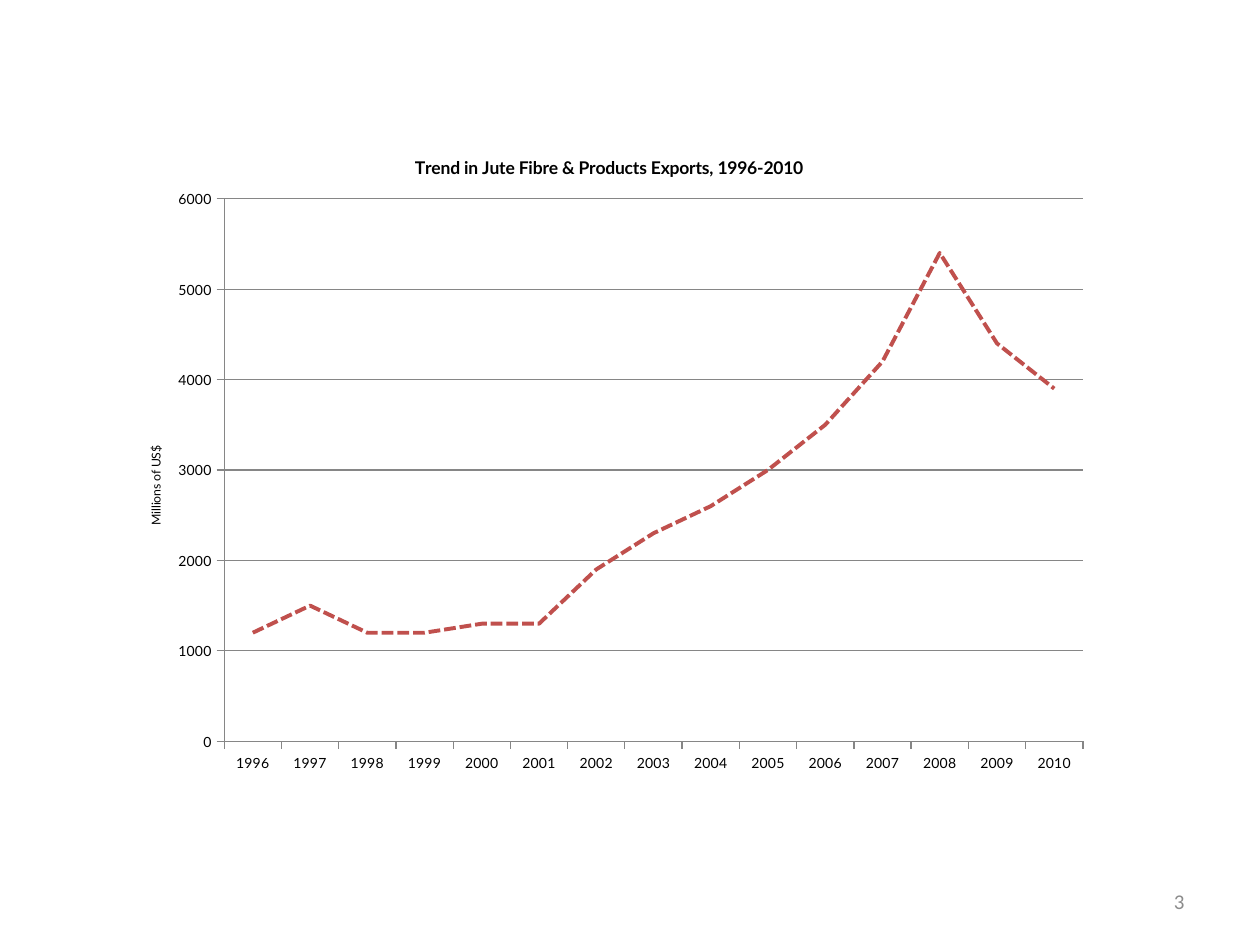
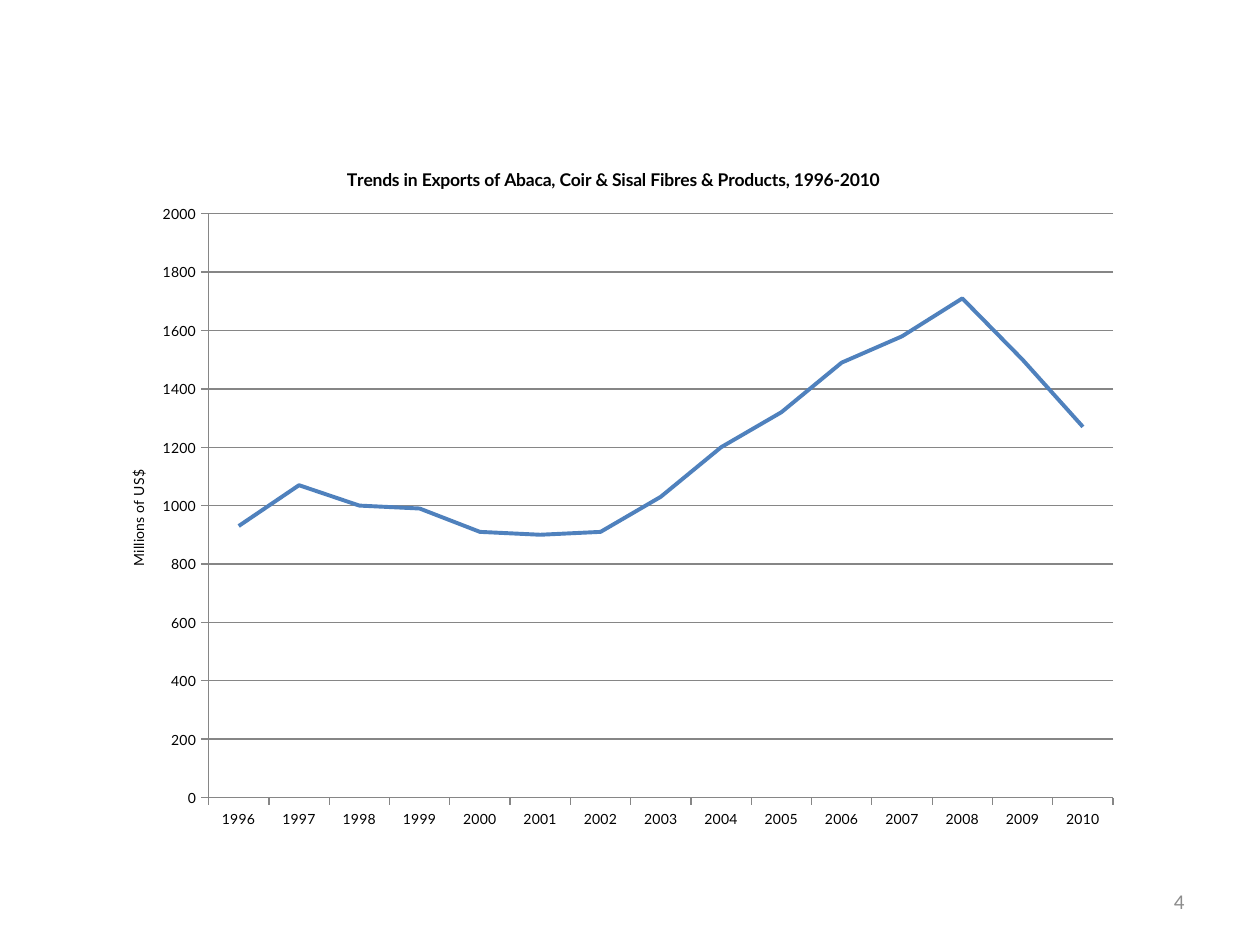
from lxml import etree
from pptx import Presentation
from pptx import util as u
from pptx.chart import data as cd
from pptx.dml import color
from pptx.enum import chart as ch, dml, text
from pptx.oxml import ns

# Shared style
INK, GREY, AXIS_GREY = "000000", "8C8C8C", "868686"
BODY_FONT, CHART_FONT = "Calibri", "Lato"
YEARS = [str(year) for year in range(1996, 2011)]


def rgb(value):
    return color.RGBColor.from_string(value)


def set_layout(parent, index, inner=False, **fractions):
    """Place a chart part by fractions of the chart area."""
    old = parent.find(ns.qn("c:layout"))
    if old is not None:
        parent.remove(old)
    layout = etree.Element(ns.qn("c:layout"))
    manual = etree.SubElement(layout, ns.qn("c:manualLayout"))
    settings = {"layoutTarget": "inner"} if inner else {}
    settings.update(xMode="edge", yMode="edge", **fractions)
    for tag, value in settings.items():
        etree.SubElement(manual, ns.qn("c:" + tag)).set("val", str(value))
    parent.insert(index, layout)


class Deck:
    def __init__(self):
        self.prs = Presentation()
        self.prs.slide_width, self.prs.slide_height = u.Cm(25.4), u.Cm(19.05)
        self.s = None

    def add_slide(self, number):
        self.s = self.prs.slides.add_slide(self.prs.slide_layouts[6])
        self.page_number(number)

    def style(self, font, size, ink=INK, name=CHART_FONT, bold=False):
        font.name, font.size, font.bold = name, u.Pt(size), bold
        font.color.rgb = rgb(ink)

    def page_number(self, number):
        sp = self.s.shapes.add_textbox(u.Cm(18.2), u.Cm(17.66), u.Cm(5.93), u.Cm(1.01))
        tf = sp.text_frame
        tf.word_wrap = True
        tf.vertical_anchor = text.MSO_ANCHOR.MIDDLE
        p = tf.paragraphs[0]
        p.alignment = text.PP_ALIGN.RIGHT
        r = p.add_run()
        r.text = str(number)
        self.style(r.font, 12, GREY, BODY_FONT)

    def chart_text(self, title, words, size, x, y, bold=False):
        tf = title.text_frame
        r = tf.paragraphs[0].add_run()
        r.text = words
        self.style(r.font, size, bold=bold)
        set_layout(title.element, 1, x=x, y=y)

    def axis(self, axis):
        axis.major_tick_mark = ch.XL_TICK_MARK.OUTSIDE
        axis.minor_tick_mark = ch.XL_TICK_MARK.NONE
        self.style(axis.tick_labels.font, 8)
        self.line(axis.format.line, AXIS_GREY, 0.75)

    def line(self, line, ink, width):
        line.color.rgb = rgb(ink)
        line.width = u.Pt(width)

    def trend_chart(self, box, title, title_x, values, ink, top, unit_size,
                    unit_y, plot_height, dash=None):
        data = cd.CategoryChartData()
        data.categories = YEARS
        data.add_series("Series 1", values)
        frame = self.s.shapes.add_chart(
            ch.XL_CHART_TYPE.LINE, *(u.Cm(v) for v in box), data)
        chart = frame.chart
        chart.has_legend = False
        self.style(chart.font, 10, name=BODY_FONT)

        # Titles and plot area
        chart.has_title = True
        self.chart_text(chart.chart_title, title, 10, title_x, 0.04, bold=True)
        plot_area = chart.element.find(".//" + ns.qn("c:plotArea"))
        set_layout(plot_area, 0, inner=True, x=0.11, y=0.11, w=0.87, h=plot_height)

        # Axes
        self.axis(chart.category_axis)
        axis = chart.value_axis
        self.axis(axis)
        axis.minimum_scale, axis.maximum_scale = 0, top
        axis.major_unit = 1000 if top > 2000 else 200
        axis.has_major_gridlines = True
        self.line(axis.major_gridlines.format.line, AXIS_GREY, 0.75)
        axis.has_title = True
        self.chart_text(axis.axis_title, "Millions of US$", unit_size, 0.03, unit_y)
        body = axis.axis_title.element.find(".//" + ns.qn("a:bodyPr"))
        body.set("rot", "-5400000")
        body.set("vert", "horz")

        # Trend line
        chart.plots[0].vary_by_categories = False
        series = chart.plots[0].series[0]
        series.smooth = False
        series.marker.style = ch.XL_MARKER_STYLE.NONE
        self.line(series.format.line, ink, 2.25)
        if dash:
            series.format.line.dash_style = dash


def main():
    deck = Deck()

    # Jute exports
    deck.add_slide(3)
    deck.trend_chart(
        (2.33, 2.54, 19.9, 13.34),
        "Trend in Jute Fibre & Products Exports, 1996-2010", 0.3,
        [1200, 1500, 1200, 1200, 1300, 1300, 1900, 2300,
         2600, 3000, 3500, 4200, 5400, 4400, 3900],
        "C0504D", 6000, 7, 0.48, 0.82, dml.MSO_LINE.SQUARE_DOT)

    # Abaca, coir and sisal exports
    deck.add_slide(4)
    deck.trend_chart(
        (1.9, 2.75, 20.96, 14.18),
        "Trends in Exports of Abaca, Coir & Sisal Fibres & Products, 1996-2010", 0.24,
        [930, 1070, 1000, 990, 910, 900, 910, 1030,
         1200, 1320, 1490, 1580, 1710, 1500, 1270],
        "4F81BD", 2000, 8, 0.47, 0.83)

    deck.prs.save("out.pptx")


if __name__ == "__main__":
    main()
